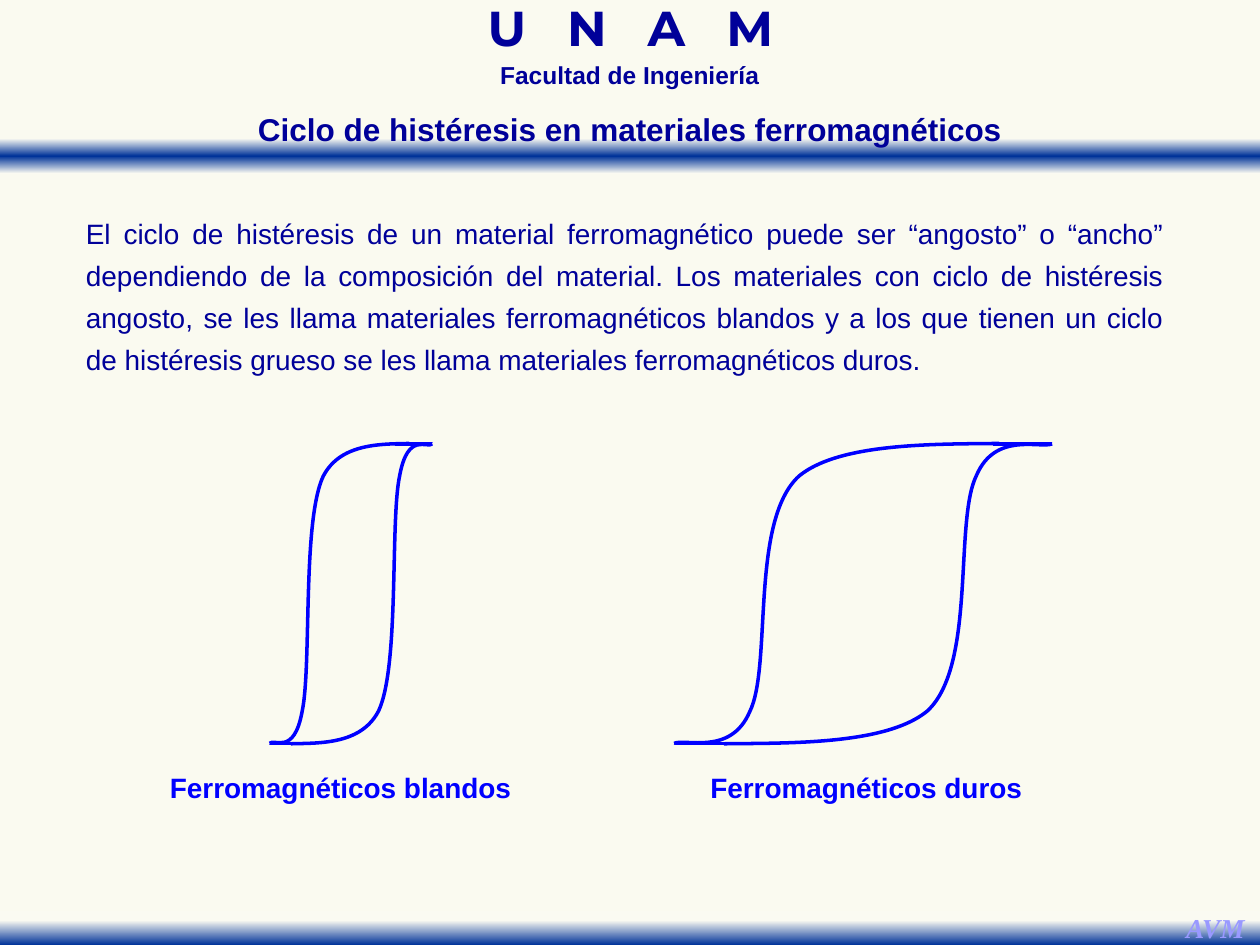
from lxml.etree import SubElement
from pptx import Presentation
from pptx.dml.color import RGBColor as Rgb
from pptx.enum.shapes import MSO_CONNECTOR as Connector, MSO_SHAPE as Shape
from pptx.enum.text import PP_ALIGN as Align
from pptx.oxml.ns import qn
from pptx.util import Pt

COLORS = {"paper": "FAFAF0", "fade": "FAFAF2", "band": "003399",
          "navy": "000099", "blue": "0000FF", "lilac": "9999FF"}

BRANCH = [(0, 424.8), (0.03, 421.9), (0.15, 432), (0.2, 406.8),
          (0.26, 380.9), (0.2, 298.1), (0.33, 272.2),
          (0.47, 247), (0.86, 256.3), (1, 252)]

BODY = ("El ciclo de histéresis de un material ferromagnético puede ser “angosto” o “ancho” "
        "dependiendo de la composición del material. Los materiales con ciclo de histéresis "
        "angosto, se les llama materiales ferromagnéticos blandos y a los que tienen un ciclo "
        "de histéresis grueso se les llama materiales ferromagnéticos duros.")


def color(name):
    return Rgb.from_string(COLORS[name])


class SlideBuilder:
    text_format = {"name": "Arial", "size": Pt(16), "bold": True, "italic": False}
    line_width = Pt(2)

    def __init__(self, slide):
        self.slide = slide
        slide.background.fill.solid()
        slide.background.fill.fore_color.rgb = color("paper")

    def rectangle(self, box):
        shape = self.slide.shapes.add_shape(Shape.RECTANGLE, *map(Pt, box))
        shape.shadow.inherit = False
        return shape

    def band(self, box, stops):
        shape = self.rectangle(box)
        shape.line.fill.background()
        shape.fill.gradient()
        shape.fill.gradient_angle = 270
        stop_list = shape._element.spPr.find(qn("a:gradFill")).find(qn("a:gsLst"))
        for stop in list(stop_list):
            stop_list.remove(stop)
        for position, name in stops:
            stop = SubElement(stop_list, qn("a:gs"), pos=str(position * 1000))
            SubElement(stop, qn("a:srgbClr"), val=COLORS[name])

    def mask(self, box):
        shape = self.rectangle(box)
        shape.fill.solid()
        shape.fill.fore_color.rgb = color("paper")
        shape.line.color.rgb = color("paper")
        shape.line.width = Pt(0.75)

    def text(self, text, box, ink="navy", align=Align.CENTER, spacing=1.0,
             tracking=0, wrap=True, **changes):
        frame = self.slide.shapes.add_textbox(*map(Pt, box)).text_frame
        frame.word_wrap = wrap
        paragraph = frame.paragraphs[0]
        paragraph.alignment = align
        paragraph.line_spacing = spacing
        run = paragraph.add_run()
        run.text = text
        for name, value in {**self.text_format, **changes}.items():
            setattr(run.font, name, value)
        run.font.color.rgb = color(ink)
        if tracking:
            run._r.get_or_add_rPr().set("spc", str(tracking))

    def curve(self, points):
        vertices = [(Pt(x), Pt(y)) for x, y in points]
        freeform = self.slide.shapes.build_freeform(*vertices[0])
        freeform.add_line_segments(vertices[1:], close=False)
        shape = freeform.convert_to_shape()
        outline = next(shape._element.iter(qn("a:path")))
        segments = outline.findall(qn("a:lnTo"))
        for first in range(0, len(segments), 3):
            bezier = SubElement(outline, qn("a:cubicBezTo"))
            for segment in segments[first:first + 3]:
                bezier.append(segment[0])
                outline.remove(segment)
        shape.shadow.inherit = False
        shape.fill.background()
        self.stroke(shape.line)
        return shape

    def segment(self, left, right, y):
        connector = self.slide.shapes.add_connector(
            Connector.STRAIGHT, Pt(left), Pt(y), Pt(right), Pt(y))
        self.stroke(connector.line)
        SubElement(connector._element.spPr, qn("a:effectLst"))

    def stroke(self, line):
        line.color.rgb = color("blue")
        line.width = self.line_width

    def loop(self, left, width, flat_left):
        branch = [(left + x * width, y) for x, y in BRANCH]
        self.curve(branch)
        self.mask((left + 0.86 * width, 247, 0.17 * width, 5))
        falling = self.curve(branch)
        falling.rotation = 180
        falling.top = Pt(246.4)
        self.mask((left - 0.04 * width, 426.2, 0.17 * width, 5))
        self.segment(flat_left, flat_left + 18, 253.9)


def main():
    presentation = Presentation()
    presentation.slide_width, presentation.slide_height = Pt(720), Pt(540)
    builder = SlideBuilder(presentation.slides.add_slide(presentation.slide_layouts[6]))

    builder.band((0, 79.2, 720, 20), [(0, "fade"), (50, "band"), (100, "fade")])
    builder.text("U N A M", (219.5, 4.3, 281.5, 31), spacing=0.7, tracking=780,
                 name="Montserrat", size=Pt(28))
    builder.text("Facultad de Ingeniería", (231.4, 35.3, 257, 19.5), spacing=0.7, size=Pt(14))
    builder.band((0, 520.5, 720, 19.5), [(28, "fade"), (100, "band")])
    builder.text("AVM", (670, 517, 49, 26.6), ink="lilac", wrap=False,
                 name="Times New Roman", size=Pt(15.6), italic=True)
    builder.text(BODY, (42, 115.2, 630, 101.5), align=Align.JUSTIFY, spacing=1.25, bold=False)

    builder.loop(154, 93, 226)
    builder.text("Ferromagnéticos blandos", (90, 432, 216, 31.7), ink="blue",
                 align=Align.JUSTIFY, spacing=1.25)
    builder.loop(385.2, 216, 567.2)
    builder.text("Ferromagnéticos duros", (396, 432, 198, 31.7), ink="blue", spacing=1.25)

    builder.text("Ciclo de histéresis en materiales ferromagnéticos",
                 (116.3, 59.4, 487.4, 28.8), size=Pt(18))
    presentation.save("out.pptx")


if __name__ == "__main__":
    main()
